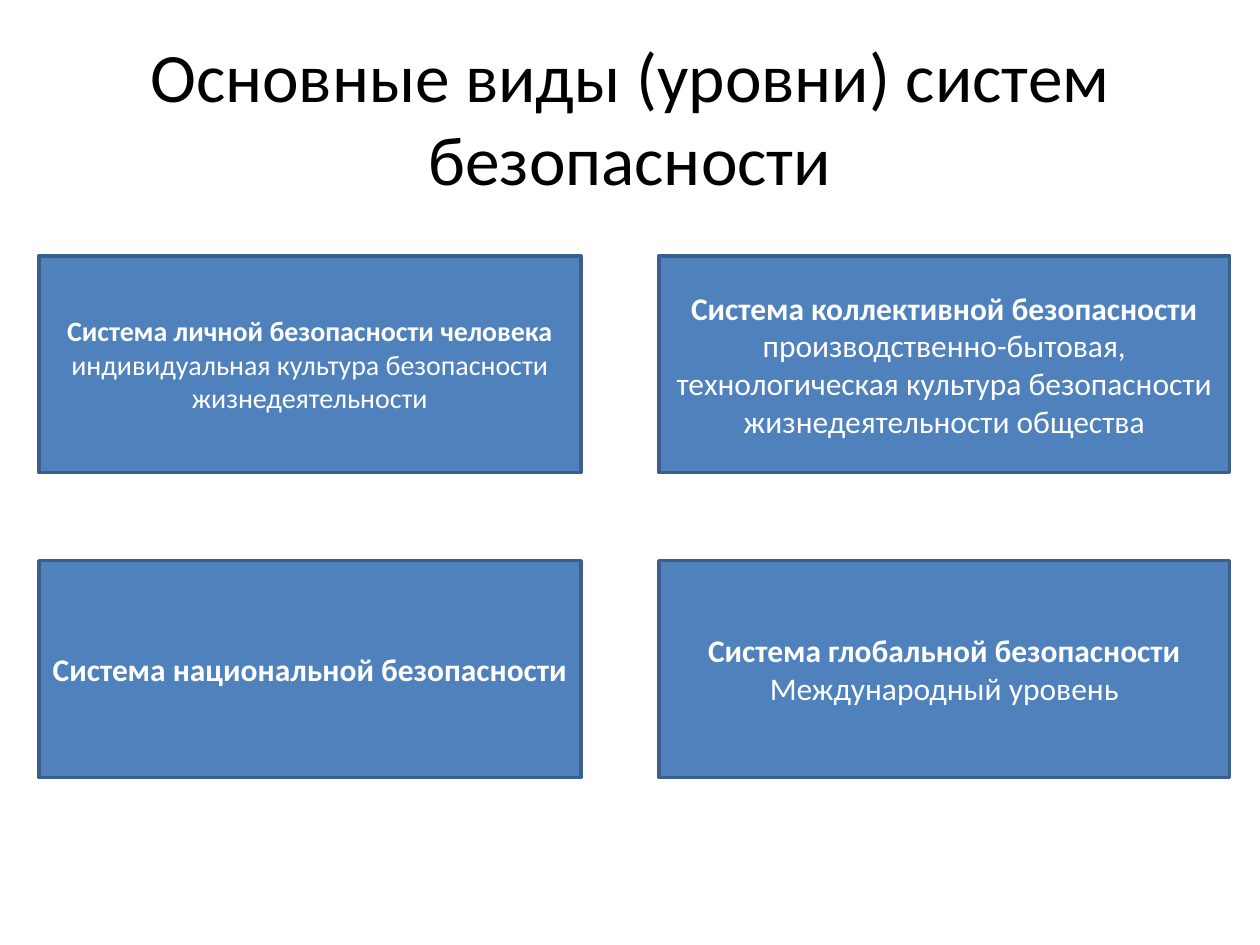
from pptx import Presentation
from pptx.dml.color import RGBColor
from pptx.util import Inches, Pt
from pptx.enum import shapes, text

COLORS = {"fill": "4F81BD", "line": "3A5F8C", "title": "000000", "label": "FFFFFF"}


class SlideBuilder:
    font = "Calibri"

    def __init__(self, slide):
        self.slide = slide

    def color(self, name):
        return RGBColor.from_string(COLORS[name])

    def set_text(self, sp, lines, size, color, bold_first=False):
        tf = sp.text_frame
        tf.word_wrap = True
        tf.vertical_anchor = text.MSO_ANCHOR.MIDDLE
        for i, line in enumerate(lines):
            p = tf.add_paragraph() if i else tf.paragraphs[0]
            p.text = line
            p.alignment = text.PP_ALIGN.CENTER
            p.font.name = self.font
            p.font.size = Pt(size)
            p.font.bold = bold_first and i == 0
            p.font.color.rgb = self.color(color)

    def title(self, line, left, top, width, height, size):
        sp = self.slide.shapes.add_textbox(
            Inches(left), Inches(top), Inches(width), Inches(height))
        self.set_text(sp, [line], size, "title")

    def box(self, lines, left, top, width, height, size):
        sp = self.slide.shapes.add_shape(
            shapes.MSO_SHAPE.RECTANGLE,
            Inches(left), Inches(top), Inches(width), Inches(height))
        sp.shadow.inherit = False
        sp.fill.solid()
        sp.fill.fore_color.rgb = self.color("fill")
        sp.line.color.rgb = self.color("line")
        sp.line.width = Pt(2)
        self.set_text(sp, lines, size, "label", bold_first=True)


def main():
    prs = Presentation()
    prs.slide_width, prs.slide_height = Inches(10), Inches(7.5)
    s = SlideBuilder(prs.slides.add_slide(prs.slide_layouts[6]))
    s.title("Основные виды (уровни) систем безопасности", 0.5, 0.3, 9, 1.25, 39.6)

    columns = [(0.31, 4.3), (5.23, 4.53)]
    rows = [2.03, 4.45]
    levels = [
        (16, ["Система личной безопасности человека",
              "индивидуальная культура безопасности жизнедеятельности"]),
        (18, ["Система коллективной безопасности",
              "производственно-бытовая, технологическая культура безопасности "
              "жизнедеятельности общества"]),
        (18, ["Система национальной безопасности"]),
        (18, ["Система глобальной безопасности", "Международный уровень"]),
    ]
    for i, (size, lines) in enumerate(levels):
        left, width = columns[i % 2]
        s.box(lines, left, rows[i // 2], width, 1.72, size)
    prs.save("out.pptx")


if __name__ == "__main__":
    main()
